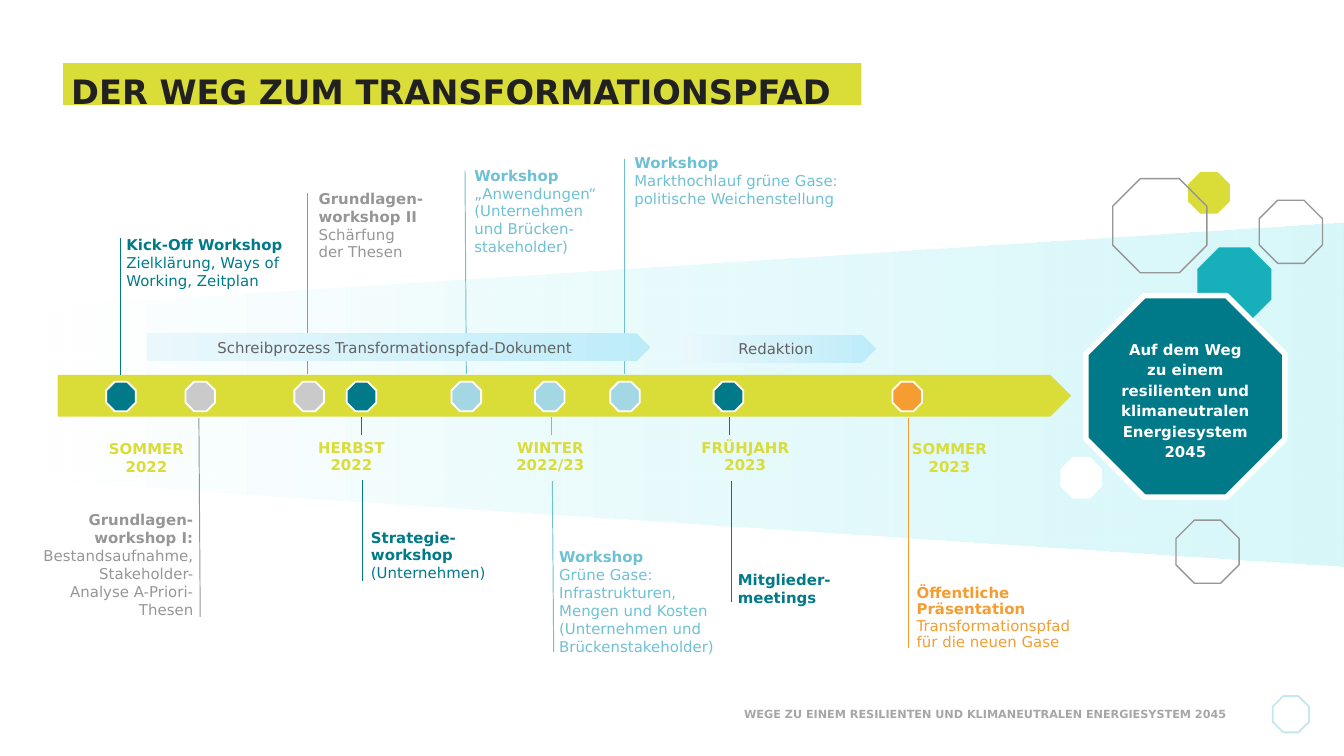
from copy import deepcopy

from lxml.etree import SubElement
from pptx import Presentation
from pptx.dml.color import RGBColor
from pptx.enum.shapes import MSO_CONNECTOR, MSO_SHAPE
from pptx.enum.text import MSO_ANCHOR, MSO_AUTO_SIZE, PP_ALIGN
from pptx.oxml.ns import qn
from pptx.util import Inches, Pt

# Grid: 100 columns by 56.25 rows of square cells (16:9)
CELL = Inches(10) / 100
COLUMNS, ROWS = 100, 56.25

FONT = "DejaVu Sans"
WHITE = RGBColor(0xFF, 0xFF, 0xFF)
INK = RGBColor(0x21, 0x21, 0x21)
DARK_GREY = RGBColor(0x61, 0x61, 0x61)
GREY = RGBColor(0x96, 0x96, 0x96)
FOOTER_GREY = RGBColor(0xA6, 0xA6, 0xA6)
LIGHT_GREY = RGBColor(0xCA, 0xCA, 0xCA)
LIME = RGBColor(0xDA, 0xDD, 0x38)
PETROL = RGBColor(0x00, 0x7A, 0x89)
TURQUOISE = RGBColor(0x17, 0xAF, 0xBA)
SKY = RGBColor(0x6E, 0xC1, 0xD4)
PALE_SKY = RGBColor(0xA3, 0xD7, 0xE4)
CORNER_BLUE = RGBColor(0xC7, 0xE7, 0xEF)
ORANGE = RGBColor(0xF5, 0x9D, 0x31)
BEAM = RGBColor(0xC9, 0xF5, 0xF8)
ARROW_TONES = [RGBColor(0xBD, 0xEC, 0xF9), RGBColor(0xD5, 0xF2, 0xFA), RGBColor(0xEA, 0xF8, 0xFC)]

LEFT, CENTER, RIGHT = PP_ALIGN.LEFT, PP_ALIGN.CENTER, PP_ALIGN.RIGHT
NORMAL_INSETS = (1, 0.5, 1, 0.5)
TIGHT_INSETS = (0.7, 0.4, 0.7, 0.4)
SEASON_INSETS = (0, 0.9, 0, 0)

# Event labels: box, colour, bold paragraphs, plain paragraphs, alignment, line spacing
EVENTS = [
    ((34.6, 11.8, 14.3, 7.8), SKY, ["Workshop"],
     ["„Anwendungen“", "(Unternehmen", "und Brücken-", "stakeholder)"], LEFT, None),
    ((46.5, 10.2, 17.7, 6.5), SKY, ["Workshop"],
     ["Markthochlauf grüne Gase: politische Weichenstellung"], LEFT, None),
    ((8.7, 16.4, 14.5, 6.3), PETROL, ["Kick-Off Workshop"],
     ["Zielklärung, Ways of Working, Zeitplan"], LEFT, None),
    ((23, 13.9, 10.9, 5.7), GREY, ["Grundlagen-", "workshop II"],
     ["Schärfung", "der Thesen"], LEFT, None),
    ((54.2, 41.8, 8.6, 3.9), PETROL, ["Mitglieder-\nmeetings"], [], LEFT, Pt(10)),
    ((26.9, 39.1, 13.7, 4.4), PETROL, ["Strategie-workshop"], ["(Unternehmen)"], LEFT, None),
    ((2.1, 38.1, 13, 7.8), GREY, ["Grundlagen-\nworkshop I:"],
     ["Bestandsaufnahme, Stakeholder-\nAnalyse A-Priori-\nThesen"], RIGHT, None),
    ((40.9, 39.2, 17.2, 11.1), SKY, ["Workshop"],
     ["Grüne Gase: Infrastrukturen,\nMengen und Kosten",
      "(Unternehmen und Brückenstakeholder)"], LEFT, None),
    ((67.5, 43.2, 18.1, 5.6), ORANGE, ["Öffentliche\nPräsentation"],
     ["Transformationspfad\nfür die neuen Gase"], LEFT, 0.9),
]

# Season labels: left, width, height, text, line spacing
SEASONS = [
    (7, 7.8, 3.4, "SOMMER 2022", None),
    (22.3, 7.7, 4.2, "HERBST\n2022", Pt(9)),
    (37.5, 6.9, 4.2, "WINTER 2022/23", Pt(9)),
    (52, 6.9, 4.2, "FRÜHJAHR 2023", Pt(9)),
    (67.2, 6.9, 4.2, "SOMMER 2023", None),
]

# Markers on the time arrow: left edge, colour
MARKERS = [(7.9, PETROL), (25.8, PETROL), (53.1, PETROL), (13.8, LIGHT_GREY), (39.8, PALE_SKY),
           (45.4, PALE_SKY), (21.9, LIGHT_GREY), (33.6, PALE_SKY), (66.4, ORANGE)]

# Stems: start column and row, end column and row, colour
STEMS = [
    (9, 27.9, 9, 17.7, PETROL), (14.9, 45.9, 14.8, 31.1, GREY), (22.9, 27.8, 22.9, 14.4, GREY),
    (27, 43.2, 27, 35.7, PETROL), (34.7, 27.8, 34.6, 12.7, SKY), (46.5, 27.8, 46.5, 11.8, SKY),
    (67.6, 48.2, 67.6, 31.1, ORANGE), (26.9, 32.4, 26.9, 31, PETROL),
    (41.2, 48.5, 41.1, 35.8, SKY), (41, 32.4, 41, 31, SKY),
    (54.4, 44.8, 54.4, 35.8, PETROL), (54.3, 32.4, 54.3, 31, PETROL),
]


def cells(*counts):
    return [round(count * CELL) for count in counts]


def set_gradient(shape, stops, angle):
    """Fill with (position, colour, opacity) stops, angle in degrees clockwise."""
    shape.fill.gradient()
    gradient = shape._element.spPr.find(qn("a:gradFill"))
    for child in list(gradient):
        gradient.remove(child)
    stop_list = SubElement(gradient, qn("a:gsLst"))
    for position, color, opacity in stops:
        stop = SubElement(stop_list, qn("a:gs"), pos=str(position * 1000))
        tone = SubElement(stop, qn("a:srgbClr"), val=str(color))
        if opacity < 100:
            SubElement(tone, qn("a:alpha"), val=str(opacity * 1000))
    SubElement(gradient, qn("a:lin"), ang=str(angle * 60000), scaled="0")


def add_shape(slide, kind, box, fill=None, line=None, line_width=1):
    shape = slide.shapes.add_shape(kind, *cells(*box))
    shape.shadow.inherit = False
    if fill is None:
        shape.fill.background()
    else:
        shape.fill.solid()
        shape.fill.fore_color.rgb = fill
    if line is None:
        shape.line.fill.background()
    else:
        shape.line.color.rgb = line
        shape.line.width = Pt(line_width)
    return shape


def write(shape, color, bold=(), plain=(), size=8, align=LEFT, anchor=MSO_ANCHOR.MIDDLE,
          insets=TIGHT_INSETS, line_spacing=None, space_after=None):
    frame = shape.text_frame
    frame.word_wrap = True
    frame.auto_size = MSO_AUTO_SIZE.NONE
    frame.vertical_anchor = anchor
    frame.margin_left, frame.margin_top, frame.margin_right, frame.margin_bottom = cells(*insets)
    for index, text in enumerate([*bold, *plain]):
        paragraph = frame.add_paragraph() if index else frame.paragraphs[0]
        paragraph.text = text
        paragraph.alignment = align
        paragraph.line_spacing = line_spacing
        paragraph.space_after = space_after
        for run in paragraph.runs:
            run.font.name, run.font.size = FONT, Pt(size)
            run.font.bold = index < len(bold)
            run.font.color.rgb = color
        # Line breaks take the size of the text around them
        for line_break in paragraph._p.findall(qn("a:br")):
            line_break.insert(0, deepcopy(paragraph.runs[0]._r.rPr))


def add_label(slide, box, color, **text):
    write(slide.shapes.add_textbox(*cells(*box)), color, **text)


def add_stem(slide, start_column, start_row, end_column, end_row, color):
    stem = slide.shapes.add_connector(
        MSO_CONNECTOR.STRAIGHT, *cells(start_column, start_row, end_column, end_row))
    stem.line.color.rgb = color
    stem.line.width = Pt(0.5)
    SubElement(stem._element.spPr, qn("a:effectLst"))


def add_beam(slide):
    builder = slide.shapes.build_freeform(*cells(103.5, 42.4))
    builder.add_line_segments([cells(3.5, 35.8), cells(3.5, 22.8), cells(103.5, 16.3)], close=True)
    beam = builder.convert_to_shape()
    beam.shadow.inherit = False
    beam.line.fill.background()
    set_gradient(beam, [(0, WHITE, 100), (100, BEAM, 75)], 0)


def add_phase(slide, box, text):
    phase = add_shape(slide, MSO_SHAPE.PENTAGON, box)
    set_gradient(phase, [(index * 50, tone, 100) for index, tone in enumerate(ARROW_TONES)], 180)
    write(phase, DARK_GREY, plain=[text], align=CENTER)


def add_title(slide):
    bar = add_shape(slide, MSO_SHAPE.RECTANGLE, (4.7, 4.7, 59.4, 3.1), LIME)
    title = slide.shapes.title
    title.left, title.top, title.width, title.height = cells(4.3, 3.9, 91.4, 6.1)
    write(title, INK, bold=["DER WEG ZUM TRANSFORMATIONSPFAD"], size=18,
          anchor=MSO_ANCHOR.TOP, insets=NORMAL_INSETS, line_spacing=Pt(28))
    # The title stands in front of its bar
    bar._element.addnext(title._element)


def main():
    presentation = Presentation()
    presentation.slide_width, presentation.slide_height = cells(COLUMNS, ROWS)
    slide = presentation.slides.add_slide(presentation.slide_layouts[5])
    octagon = MSO_SHAPE.OCTAGON

    # Corner sign, title and background
    add_shape(slide, octagon, (94.7, 51.8, 2.7, 2.7), WHITE, CORNER_BLUE)
    add_title(slide)
    add_beam(slide)
    add_shape(slide, octagon, (88.4, 12.8, 3.1, 3.1), LIME)
    add_shape(slide, octagon, (89.1, 18.4, 5.5, 5.5), TURQUOISE)
    add_label(slide, (34.2, 51.6, 58, 3), FOOTER_GREY, size=6, align=RIGHT, insets=NORMAL_INSETS,
              bold=["WEGE ZU EINEM RESILIENTEN UND KLIMANEUTRALEN ENERGIESYSTEM 2045"])

    # Time arrow and goal
    add_shape(slide, MSO_SHAPE.PENTAGON, (4.3, 27.9, 75.4, 3.1), LIME)
    goal = add_shape(slide, octagon, (80.8, 22, 14.8, 15), PETROL, WHITE, 3)
    write(goal, WHITE, align=CENTER, insets=(0, 1.2, 0, 0.8), line_spacing=Pt(11),
          bold=["Auf dem Weg", "zu einem resilienten und klimaneutralen Energiesystem 2045"])

    # Stems, markers and season labels
    for stem in STEMS:
        add_stem(slide, *stem)
    for left, color in MARKERS:
        add_shape(slide, octagon, (left, 28.4, 2.2, 2.2), color, WHITE)
    for left, width, height, text, spacing in SEASONS:
        add_label(slide, (left, 31.8, width, height), LIME, bold=[text], align=CENTER,
                  anchor=MSO_ANCHOR.TOP, insets=SEASON_INSETS, line_spacing=spacing,
                  space_after=Pt(3))

    # Writing phases and event labels
    add_phase(slide, (10.9, 24.8, 37.5, 2.1), "Schreibprozess Transformationspfad-Dokument")
    add_phase(slide, (50.8, 24.9, 14.4, 2.1), "Redaktion")
    for box, color, bold, plain, align, spacing in EVENTS:
        add_label(slide, box, color, bold=bold, plain=plain, align=align, line_spacing=spacing)

    # Decorative octagons around the goal
    for left, top, size in [(82.8, 13.3, 7), (93.7, 14.9, 4.7), (87.5, 38.7, 4.7)]:
        add_shape(slide, octagon, (left, top, size, size), line=GREY, line_width=0.75)
    add_shape(slide, octagon, (78.9, 34, 3.1, 3.1), WHITE)

    presentation.save("out.pptx")


if __name__ == "__main__":
    main()
